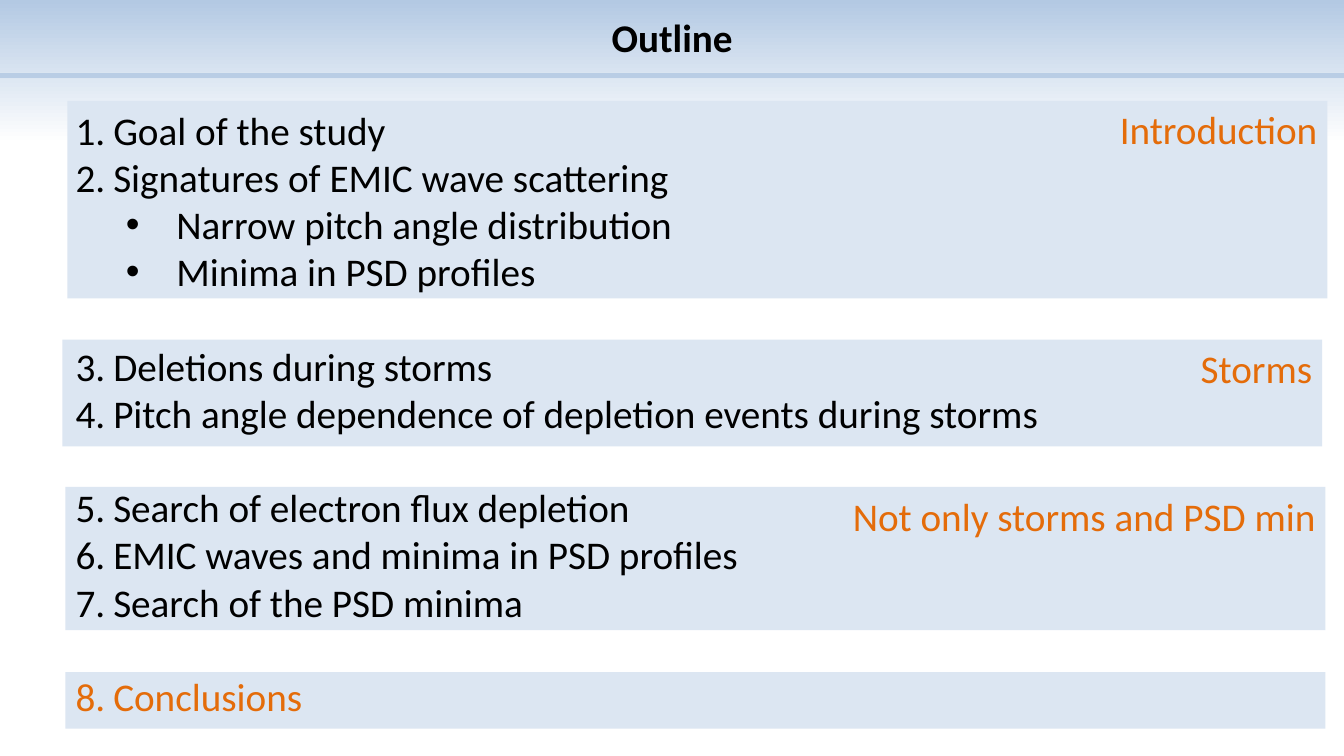
from dataclasses import dataclass

from lxml.etree import SubElement
from pptx import Presentation
from pptx.dml.color import RGBColor
from pptx.enum.shapes import MSO_CONNECTOR as CONN, MSO_SHAPE as SHAPE
from pptx.enum.text import MSO_ANCHOR as ANCHOR, MSO_AUTO_SIZE as AUTO, PP_ALIGN as ALIGN
from pptx.oxml.ns import qn
from pptx.util import Cm, Pt


@dataclass(frozen=True)
class Theme:
    font: str = "Calibri"
    size: float = 28
    line_pitch: float = 33.7
    rule_width: float = 3
    ink: str = "000000"
    accent: str = "E46C0A"
    panel: str = "DCE6F2"
    rule: str = "B9CDE5"
    sky: str = "B3C9E3"
    paper: str = "FFFFFF"


@dataclass(frozen=True)
class Item:
    text: str
    sub: bool = False
    new_group: bool = False
    accent: bool = False


# left, top, height in cm, label
PANELS = [
    (1.65, 16.94, 1.42, ""),
    (1.65, 12.27, 3.61, "Not only storms and PSD min"),
    (1.57, 8.56, 2.69, "Storms"),
    (1.70, 2.54, 4.98, "Introduction"),
]
PANEL_WIDTH = 31.75

ITEMS = [
    Item("Goal of the study"),
    Item("Signatures of EMIC wave scattering"),
    Item("Narrow pitch angle distribution", sub=True),
    Item("Minima in PSD profiles", sub=True),
    Item("Deletions during storms", new_group=True),
    Item("Pitch angle dependence of depletion events during storms"),
    Item("Search of electron flux depletion", new_group=True),
    Item("EMIC waves and minima in PSD profiles"),
    Item("Search of the PSD minima"),
    Item("Conclusions", new_group=True, accent=True),
]


class OutlineSlide:
    def __init__(self, prs, theme):
        self.theme = theme
        self.s = prs.slides.add_slide(prs.slide_layouts[1])
        self.width = prs.slide_width

    def background(self):
        fill = self.s.background.fill
        fill.gradient()
        fill.gradient_angle = 270
        stops = zip(fill.gradient_stops, (self.theme.sky, self.theme.paper), (0, 0.19))
        for stop, color, position in stops:
            stop.color.rgb = RGBColor.from_string(color)
            stop.position = position

    def rule(self, y):
        line = self.s.shapes.add_connector(CONN.STRAIGHT, 0, Cm(y), self.width, Cm(y))
        line.line.color.rgb = RGBColor.from_string(self.theme.rule)
        line.line.width = Pt(self.theme.rule_width)
        SubElement(line._element.spPr, qn("a:effectLst"))

    def panel(self, left, top, height, label):
        sp = self.s.shapes.add_shape(
            SHAPE.RECTANGLE, Cm(left), Cm(top), Cm(PANEL_WIDTH), Cm(height))
        sp.shadow.inherit = False
        sp.fill.solid()
        sp.fill.fore_color.rgb = RGBColor.from_string(self.theme.panel)
        sp.line.fill.background()
        if label:
            tf = sp.text_frame
            tf.vertical_anchor = ANCHOR.TOP
            tf.text = label
            tf.paragraphs[0].alignment = ALIGN.RIGHT
            self.style(tf.paragraphs[0], self.theme.accent)

    def title(self, text):
        sp = self.place(self.s.shapes.title, 5.51, -0.05, 22.86, 1.96)
        tf = sp.text_frame
        tf.auto_size = AUTO.NONE
        tf.vertical_anchor = ANCHOR.MIDDLE
        tf.text = text
        tf.paragraphs[0].alignment = ALIGN.CENTER
        self.style(tf.paragraphs[0], self.theme.ink, bold=True)

    def numbered_list(self, items):
        sp = self.place(self.s.placeholders[1], 1.65, 2.54, 25.45, 15.82)
        tf = sp.text_frame
        tf.auto_size = AUTO.SHAPE_TO_FIT_TEXT
        tf.vertical_anchor = ANCHOR.TOP
        tf.text = "\n".join(item.text for item in items)
        for p, item in zip(tf.paragraphs, items):
            p.level = int(item.sub)
            p.line_spacing = Pt(self.theme.line_pitch)
            p.space_before = Pt(self.theme.line_pitch if item.new_group else 0)
            p.space_after = Pt(0)
            self.marker(p, item.sub)
            self.style(p, self.theme.accent if item.accent else self.theme.ink)

    def marker(self, p, sub):
        """Give the paragraph a dot if it is a sub-item, else a running number."""
        pPr = p._p.get_or_add_pPr()
        margin, hang = (2.54, 1.27) if sub else (0.95, 0.95)
        pPr.set("marL", str(Cm(margin)))
        pPr.set("indent", str(-Cm(hang)))
        if sub:
            SubElement(pPr, qn("a:buFont"), typeface="Arial")
            SubElement(pPr, qn("a:buChar"), char="•")
        else:
            SubElement(pPr, qn("a:buFont"), typeface="+mj-lt")
            SubElement(pPr, qn("a:buAutoNum"), type="arabicPeriod")

    def place(self, sp, left, top, width, height):
        """Position a placeholder and bring it in front of the panels."""
        sp.left, sp.top, sp.width, sp.height = Cm(left), Cm(top), Cm(width), Cm(height)
        self.s.shapes._spTree.append(sp._element)
        return sp

    def style(self, p, color, bold=False):
        for r in p.runs:
            r.font.name = self.theme.font
            r.font.size = Pt(self.theme.size)
            r.font.bold = bold
            r.font.color.rgb = RGBColor.from_string(color)


def main():
    prs = Presentation()
    prs.slide_width, prs.slide_height = Cm(33.87), Cm(19.05)
    outline = OutlineSlide(prs, Theme())
    outline.background()
    outline.rule(1.9)
    for panel in PANELS:
        outline.panel(*panel)
    outline.title("Outline")
    outline.numbered_list(ITEMS)
    prs.save("out.pptx")


if __name__ == "__main__":
    main()
